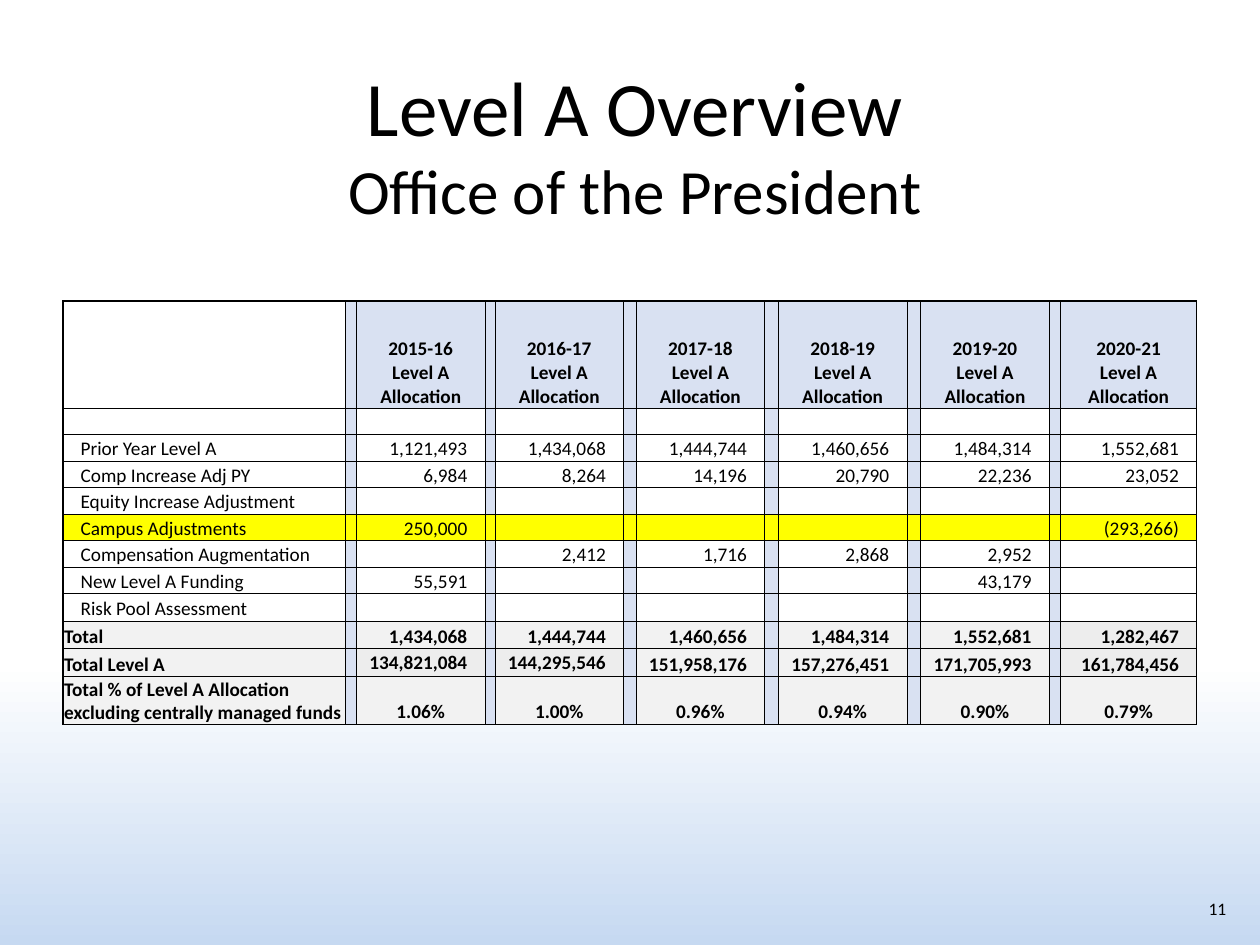
from lxml import etree
from pptx import Presentation
from pptx.dml.color import RGBColor
from pptx.enum.text import MSO_ANCHOR, PP_ALIGN
from pptx.oxml.ns import qn
from pptx.util import Inches, Pt

LEFT, CENTER, RIGHT = PP_ALIGN.LEFT, PP_ALIGN.CENTER, PP_ALIGN.RIGHT
TOP, MIDDLE, BOTTOM = MSO_ANCHOR.TOP, MSO_ANCHOR.MIDDLE, MSO_ANCHOR.BOTTOM
BLACK, WHITE, BLUE, YELLOW = "000000", "FFFFFF", "D9E1F2", "FFFF00"
GRAY, DARK_GRAY = "F2F2F2", "EDEDED"


def rgb(value):
    return RGBColor.from_string(value)


def add_run(p, text, size, bold=False):
    r = p.add_run()
    r.text = text
    r.font.name = "Calibri"
    r.font.size = Pt(size)
    r.font.bold = bold
    r.font.color.rgb = rgb(BLACK)


prs = Presentation()
prs.slide_width, prs.slide_height = Inches(10), Inches(7.5)
s = prs.slides.add_slide(prs.slide_layouts[5])

fill = s.background.fill
fill.gradient()
fill.gradient_angle = 270
for stop, position, color in zip(fill.gradient_stops, (0.7, 1), (WHITE, "C6D9F1")):
    stop.position = position
    stop.color.rgb = rgb(color)

title = s.shapes.title
title.left, title.top = Inches(0.33), Inches(0.42)
title.width, title.height = Inches(9.42), Inches(0.83)
tf = title.text_frame
tf.vertical_anchor = TOP
p = tf.paragraphs[0]
p.alignment = CENTER
add_run(p, "Level A Overview", 44)
p.add_line_break()
add_run(p, "Office of the President", 36)

sp = s.shapes.add_textbox(Inches(7.5), Inches(7.08), Inches(2.33), Inches(0.4))
tf = sp.text_frame
tf.word_wrap = True
p = tf.paragraphs[0]
p.alignment = RIGHT
add_run(p, "11", 10)

years = ["2015-16", "2016-17", "2017-18", "2018-19", "2019-20", "2020-21"]
rows = [
    ["", *[f"{year}\nLevel A Allocation" for year in years]],
    [""] * 7,
    ["Prior Year Level A", "1,121,493", "1,434,068", "1,444,744", "1,460,656", "1,484,314", "1,552,681"],
    ["Comp Increase Adj PY", "6,984", "8,264", "14,196", "20,790", "22,236", "23,052"],
    ["Equity Increase Adjustment", "", "", "", "", "", ""],
    ["Campus Adjustments", "250,000", "", "", "", "", "(293,266)"],
    ["Compensation Augmentation", "", "2,412", "1,716", "2,868", "2,952", ""],
    ["New Level A Funding", "55,591", "", "", "", "43,179", ""],
    ["Risk Pool Assessment", "", "", "", "", "", ""],
    ["Total", "1,434,068", "1,444,744", "1,460,656", "1,484,314", "1,552,681", "1,282,467"],
    ["Total Level A", "134,821,084", "144,295,546", "151,958,176", "157,276,451", "171,705,993", "161,784,456"],
    ["Total % of Level A Allocation excluding centrally managed funds",
     "1.06%", "1.00%", "0.96%", "0.94%", "0.90%", "0.79%"],
]
col_widths = [2.24, 0.09, 1.02, 0.08, 1.02, 0.1, 1.02, 0.11, 1.02, 0.11, 1.02, 0.09, 1.08]
row_heights = [0.85] + [0.21] * 7 + [0.22] * 3 + [0.38]
last_row, last_col = len(row_heights) - 1, len(col_widths) - 1
campus_row, total_row, level_row = 5, 9, 10
dark_cells = {(total_row, 12), (level_row, 2), (level_row, 4), (level_row, 12)}

table = s.shapes.add_table(len(row_heights), len(col_widths), Inches(0.5), Inches(2.39),
                           Inches(9), Inches(3.36)).table
table.first_row = table.horz_banding = False
for column, width in zip(table.columns, col_widths):
    column.width = Inches(width)
for row, height in zip(table.rows, row_heights):
    row.height = Inches(height)

for i, values in enumerate(rows):
    for j in range(len(col_widths)):
        cell = table.cell(i, j)
        spacer = j % 2 == 1
        text = "" if spacer else values[j // 2]
        bold = i == 0 or i >= total_row

        edges = {"lnL": j == 0, "lnR": j == last_col, "lnT": i == 0, "lnB": i == last_row}
        tcPr = cell._tc.get_or_add_tcPr()
        for tag, outer in edges.items():
            ln = etree.SubElement(tcPr, qn(f"a:{tag}"), w=str(Pt(1 if outer else 0.5)))
            solid = etree.SubElement(ln, qn("a:solidFill"))
            etree.SubElement(solid, qn("a:srgbClr"), val=BLACK)

        if i == campus_row:
            color = YELLOW
        elif spacer or (i == 0 and j > 0):
            color = BLUE
        elif (i, j) in dark_cells:
            color = DARK_GRAY
        elif i >= total_row:
            color = GRAY
        else:
            color = WHITE if i == 0 else None
        if color:
            cell.fill.solid()
            cell.fill.fore_color.rgb = rgb(color)
        else:
            cell.fill.background()

        if j == 0:
            align = LEFT
        else:
            align = CENTER if i in (0, last_row) else RIGHT
        cell.margin_left = Inches(0.14 if j == 0 and not bold else 0.01)
        cell.margin_right = Inches(0.14 if align == RIGHT and not spacer else 0.01)
        cell.margin_top, cell.margin_bottom = Inches(0.01), 0
        cell.vertical_anchor = MIDDLE if i == level_row and j in (2, 4) else BOTTOM

        tf = cell.text_frame
        for k, line in enumerate(text.split("\n")):
            p = tf.add_paragraph() if k else tf.paragraphs[0]
            p.alignment = align
            if line:
                add_run(p, line, 11, bold)
            else:
                etree.SubElement(p._p, qn("a:endParaRPr"), sz="1100")

prs.save("out.pptx")
